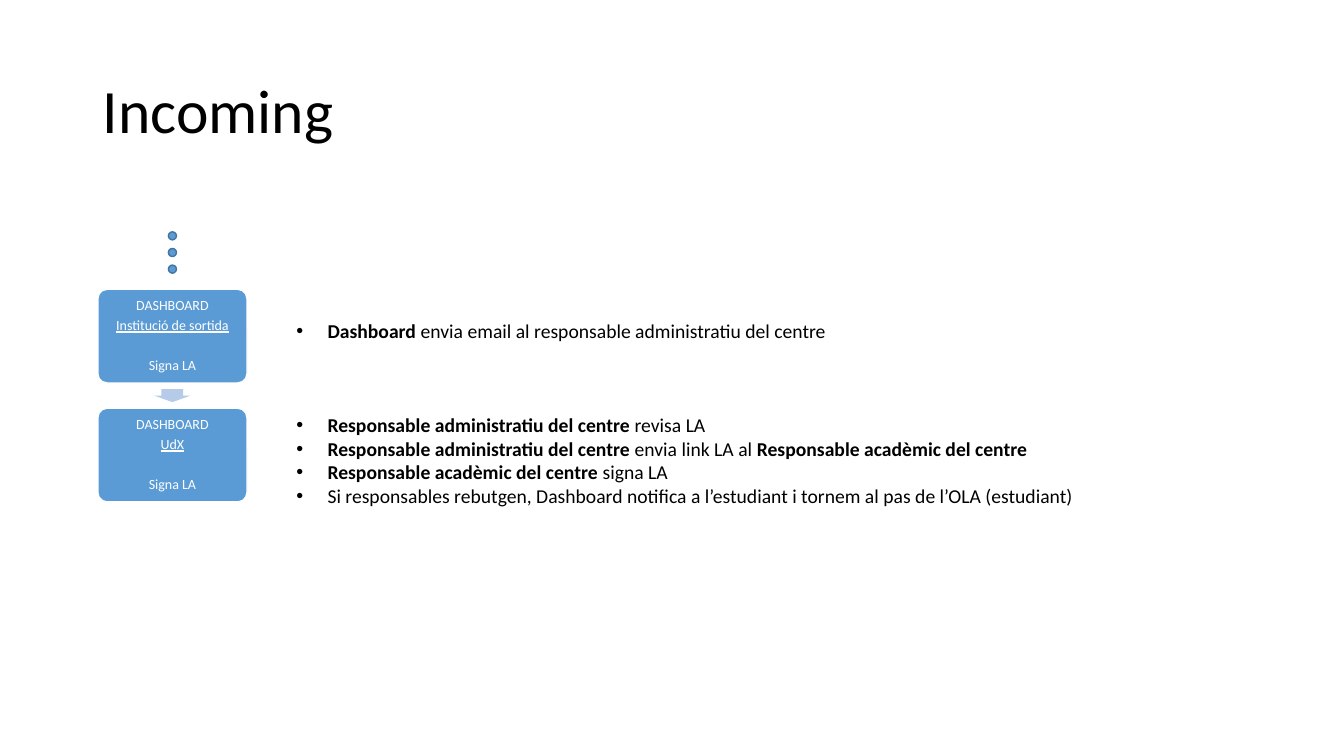
from lxml import etree
from pptx import Presentation
from pptx import util as u
from pptx.dml.color import RGBColor
from pptx.enum import shapes, text
from pptx.oxml.ns import qn

PX = 9144  # EMU per px, 100 px to the inch
FONT = "Calibri"
COLORS = {
    "ink": "000000",
    "white": "FFFFFF",
    "step": "5B9BD5",
    "dot_edge": "43739E",
    "arrow": "B5CBE7",
}

TITLE_BOX = (92, 40, 1150, 145)
FLOW_BOX = (97, 287, 148, 93)
FLOW_PITCH = 118
DOTS_BOX = (167, 230, 8, 41)
STEPS = [
    ["DASHBOARD", "Institució de sortida", "Signa LA"],
    ["DASHBOARD", "UdX", "Signa LA"],
]

ADMIN = "Responsable administratiu del centre"
ACADEMIC = "Responsable acadèmic del centre"
# Each item is a list of (words, bold) pieces.
EMAIL_NOTES = [
    [("Dashboard", True),
     (" envia email al responsable administratiu del centre", False)],
]
REVIEW_NOTES = [
    [(ADMIN, True), (" revisa LA", False)],
    [(ADMIN, True), (" envia link LA al ", False), (ACADEMIC, True)],
    [(ACADEMIC, True), (" signa LA", False)],
    [("Si responsables rebutgen, Dashboard notifica a l’estudiant "
      "i tornem al pas de l’OLA (estudiant)", False)],
]


def px(*lengths):
    return [u.Emu(round(length * PX)) for length in lengths]


def rgb(name):
    return RGBColor.from_string(COLORS[name])


def style(run, size, color="ink", bold=False, underline=False):
    font = run.font
    font.name, font.size = FONT, u.Pt(size)
    font.bold, font.underline = bold, underline
    font.color.rgb = rgb(color)


def add_preset(slide, kind, box, fill, edge=None):
    shape = slide.shapes.add_shape(kind, *px(*box))
    shape.shadow.inherit = False
    shape.fill.solid()
    shape.fill.fore_color.rgb = rgb(fill)
    if edge:
        shape.line.color.rgb = rgb(edge)
        shape.line.width = u.Pt(1)
    else:
        shape.line.fill.background()
    return shape


def add_frame(slide, box, anchor):
    frame = slide.shapes.add_textbox(*px(*box)).text_frame
    frame.word_wrap = True
    frame.vertical_anchor = anchor
    return frame


def add_title(slide, box):
    frame = add_frame(slide, box, text.MSO_ANCHOR.MIDDLE)
    frame.text = "Incoming"
    heading = frame.paragraphs[0]
    heading.line_spacing = 0.9
    style(heading.runs[0], 44)


def add_step(slide, box, lines):
    step = add_preset(slide, shapes.MSO_SHAPE.ROUNDED_RECTANGLE, box,
                      "step", "white")
    step.adjustments[0] = 0.1
    frame = step.text_frame
    frame.word_wrap = True
    frame.vertical_anchor = text.MSO_ANCHOR.MIDDLE
    (frame.margin_left, frame.margin_top,
     frame.margin_right, frame.margin_bottom) = px(5, 5, 5, 5)
    frame.text = "\n".join(lines)
    for index, line in enumerate(frame.paragraphs):
        line.alignment = text.PP_ALIGN.CENTER
        line.line_spacing = 0.9
        line.space_after = u.Pt(3.5)
        style(line.runs[0], 10, "white", underline=index == 1)
    frame.paragraphs[-1].space_before = u.Pt(14.5)


def add_flow(slide, box):
    """Stack the steps from the first one's box, with an arrow in each gap."""
    left, top, width, height = box
    for index, lines in enumerate(STEPS):
        add_step(slide, (left, top + index * FLOW_PITCH, width, height), lines)
    arrow_width, arrow_height = 36, 13
    gap = FLOW_PITCH - height
    for index in range(len(STEPS) - 1):
        arrow_top = (top + index * FLOW_PITCH + height
                     + (gap - arrow_height) / 2)
        arrow_box = (left + (width - arrow_width) / 2, arrow_top,
                     arrow_width, arrow_height)
        arrow = add_preset(slide, shapes.MSO_SHAPE.DOWN_ARROW, arrow_box,
                           "arrow")
        arrow.adjustments[0] = 0.6
        arrow.adjustments[1] = 0.5


def add_bullet(paragraph):
    props = paragraph._p.get_or_add_pPr()
    indent = px(31)[0]
    props.set("marL", str(indent))
    props.set("indent", str(-indent))
    etree.SubElement(props, qn("a:buFont")).set("typeface", "Arial")
    etree.SubElement(props, qn("a:buChar")).set("char", "•")


def add_notes(slide, box, items, anchor):
    frame = add_frame(slide, box, anchor)
    for index, pieces in enumerate(items):
        item = frame.add_paragraph() if index else frame.paragraphs[0]
        add_bullet(item)
        for words, bold in pieces:
            run = item.add_run()
            run.text = words
            style(run, 14, bold=bold)


def add_dots(slide, box, count=3):
    """Spread round dots evenly down the box."""
    left, top, size, height = box
    pitch = (height - size) / (count - 1)
    for index in range(count):
        add_preset(slide, shapes.MSO_SHAPE.OVAL,
                   (left, top + index * pitch, size, size), "step", "dot_edge")


def main():
    deck = Presentation()
    deck.slide_width, deck.slide_height = px(1333, 750)
    slide = deck.slides.add_slide(deck.slide_layouts[6])
    add_title(slide, TITLE_BOX)
    add_flow(slide, FLOW_BOX)
    add_notes(slide, (284, 288, 871, 81), EMAIL_NOTES, text.MSO_ANCHOR.MIDDLE)
    add_notes(slide, (284, 405, 871, 128), REVIEW_NOTES, text.MSO_ANCHOR.TOP)
    add_dots(slide, DOTS_BOX)
    deck.save("out.pptx")


if __name__ == "__main__":
    main()
